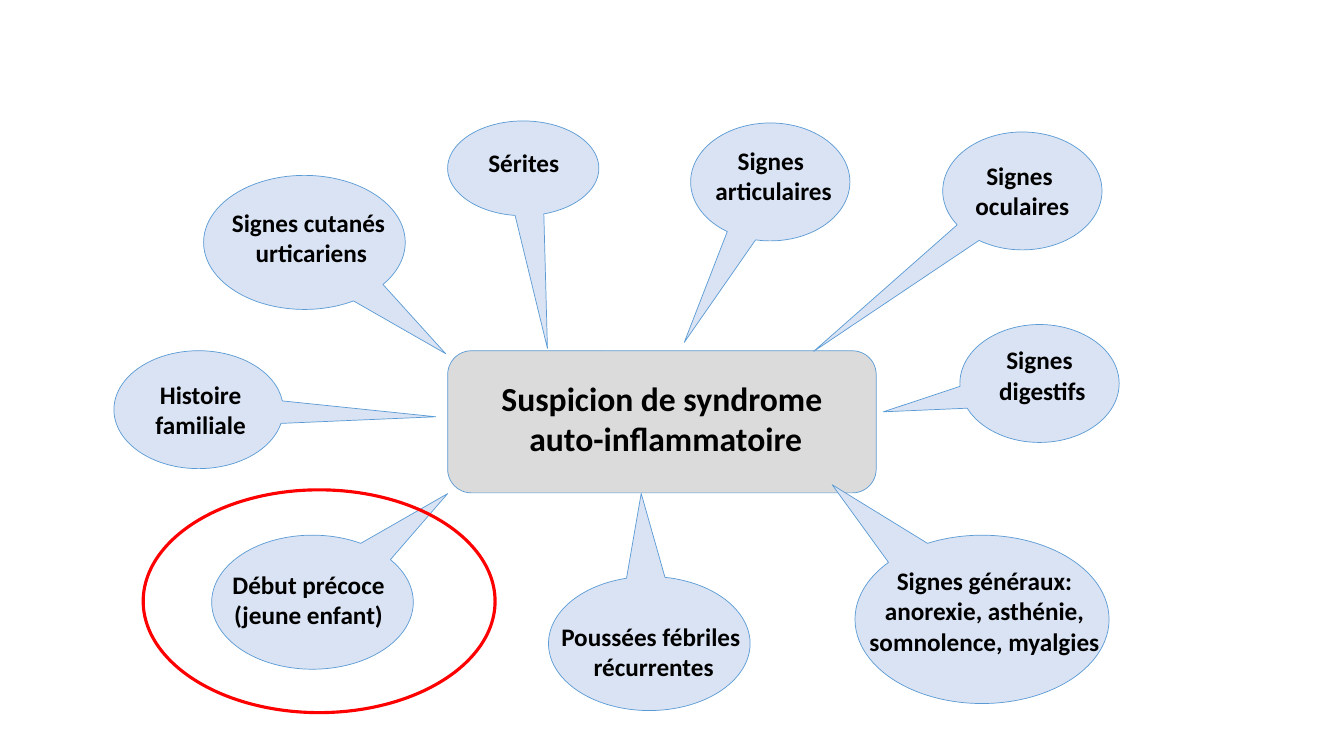
"""Build a slide of callouts around a suspected auto-inflammatory syndrome."""
from pptx import Presentation
from pptx.dml.color import RGBColor
from pptx.enum.shapes import MSO_SHAPE as Shape
from pptx.enum.text import PP_ALIGN as Align
from pptx.util import Pt

PX = 9144
COLORS = {"callout": "DAE3F3", "center": "DBDBDB", "outline": "5B9BD5",
          "highlight": "FF0000", "text": "000000"}

deck = Presentation()
deck.slide_width, deck.slide_height = 1333 * PX, 750 * PX
page = deck.slides.add_slide(deck.slide_layouts[6])


def add_outline(kind, place, fill, line="outline", weight=0.5):
    shape = page.shapes.add_shape(kind, *[n * PX for n in place])
    shape.shadow.inherit = False
    if fill:
        shape.fill.solid()
        shape.fill.fore_color.rgb = RGBColor.from_string(COLORS[fill])
    else:
        shape.fill.background()
    shape.line.color.rgb = RGBColor.from_string(COLORS[line])
    shape.line.width = Pt(weight)
    return shape


def add_label(place, lines, size):
    frame = page.shapes.add_textbox(*[n * PX for n in place]).text_frame
    frame.word_wrap = True
    frame.text = "\n".join(lines)
    for para in frame.paragraphs:
        para.alignment = Align.CENTER
        para.font.name = "Calibri"
        para.font.size = Pt(size)
        para.font.bold = True
        para.font.color.rgb = RGBColor.from_string(COLORS["text"])


add_outline(Shape.ROUNDED_RECTANGLE, (444, 348, 425, 141), "center")
add_label((444, 370, 425, 91), ["Suspicion de syndrome", " auto-inflammatoire"], 24)

callouts = [
    ((544, 572, 200, 133), (-0.04, -1.12), (533, 611, 225, 71),
     ["Poussées fébriles", " récurrentes"]),
    ((444, 120, 150, 94), (0.16, 1.9), (457, 141, 125, 40), ["Sérites"]),
    ((685, 122, 158, 117), (-0.54, 1.36), (677, 139, 175, 71),
     ["Signes", " articulaires"]),
    ((952, 322, 158, 117), (-0.98, 0.24), (952, 337, 158, 71),
     ["Signes", " digestifs"]),
    ((935, 131, 158, 117), (-1.31, 1.36), (939, 154, 150, 71),
     ["Signes ", "oculaires"]),
    ((210, 531, 200, 133), (0.67, -0.81), (202, 560, 208, 71),
     ["Début précoce (jeune enfant)"]),
    ((848, 531, 252, 167), (-0.59, -0.8), (835, 556, 283, 101),
     ["Signes généraux: anorexie, asthénie, somnolence, myalgies"]),
    ((202, 174, 200, 133), (0.7, 0.83), (202, 201, 208, 71),
     ["Signes cutanés", " urticariens"]),
    ((113, 348, 168, 117), (1.4, 0.06), (120, 371, 158, 71),
     ["Histoire familiale"]),
]
for bubble_place, tip, label_place, lines in callouts:
    bubble = add_outline(Shape.OVAL_CALLOUT, bubble_place, "callout")
    bubble.adjustments[0], bubble.adjustments[1] = tip
    add_label(label_place, lines, 18)

add_outline(Shape.OVAL, (142, 486, 349, 221), None, "highlight", 2.25)

deck.save("out.pptx")
